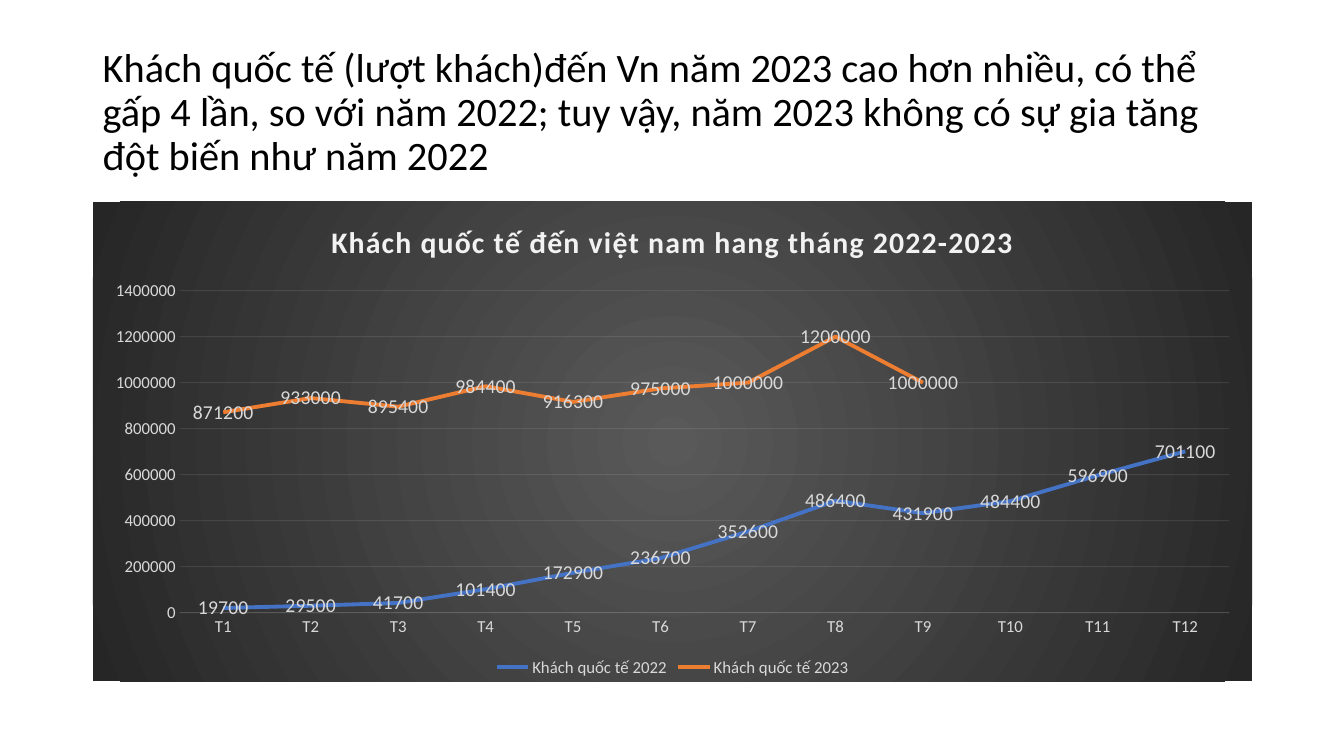
from dataclasses import dataclass

from lxml.etree import SubElement
from pptx import Presentation
from pptx.chart.data import CategoryChartData
from pptx.dml.color import RGBColor
from pptx.enum.chart import XL_CHART_TYPE, XL_LABEL_POSITION, XL_LEGEND_POSITION, XL_TICK_MARK
from pptx.enum.text import MSO_ANCHOR
from pptx.oxml import parse_xml
from pptx.oxml.ns import nsdecls, qn
from pptx.util import Inches, Pt


@dataclass(frozen=True)
class Theme:
    font: str = "Calibri"
    ink: str = "000000"
    pale: str = "F2F2F2"
    muted: str = "D9D9D9"
    glow: str = "595959"
    edge: str = "262626"
    series: tuple = ("4472C4", "ED7D31")
    heading_size: float = 28.8
    chart_title_size: float = 21.3
    label_size: float = 14
    axis_size: float = 12


class VisitorSlide:
    def __init__(self, presentation, theme):
        self.theme = theme
        self.slide = presentation.slides.add_slide(presentation.slide_layouts[6])

    def style_font(self, font, size, color, bold=False):
        font.name = self.theme.font
        font.size = Pt(size)
        font.bold = bold
        font.color.rgb = RGBColor.from_string(color)

    def add_heading(self, text, left, top, width, height):
        box = self.slide.shapes.add_textbox(Inches(left), Inches(top), Inches(width), Inches(height))
        frame = box.text_frame
        frame.word_wrap = True
        frame.vertical_anchor = MSO_ANCHOR.MIDDLE
        paragraph = frame.paragraphs[0]
        paragraph.text = text
        paragraph.line_spacing = 0.9
        self.style_font(paragraph.font, self.theme.heading_size, self.theme.ink)

    def add_line_chart(self, title, months, visitors, left, top, width, height):
        data = CategoryChartData(number_format="General")
        data.categories = months
        for name, counts in visitors.items():
            data.add_series(name, counts)
        chart = self.slide.shapes.add_chart(
            XL_CHART_TYPE.LINE, Inches(left), Inches(top), Inches(width), Inches(height), data
        ).chart
        self.style_font(chart.font, self.theme.axis_size, self.theme.muted)
        self.style_title(chart, title)
        self.style_axes(chart)
        self.style_series(chart.plots[0])
        chart.has_legend = True
        chart.legend.position = XL_LEGEND_POSITION.BOTTOM
        chart.legend.include_in_layout = False
        self.style_font(chart.legend.font, self.theme.axis_size, self.theme.muted)
        self.fill_background(chart)

    def style_title(self, chart, title):
        chart.has_title = True
        paragraph = chart.chart_title.text_frame.paragraphs[0]
        paragraph.text = title
        font = paragraph.runs[0].font
        self.style_font(font, self.theme.chart_title_size, self.theme.pale, bold=True)
        paragraph.runs[0]._r.get_or_add_rPr().set("spc", "100")
        chart.chart_title.include_in_layout = False

    def style_axes(self, chart):
        months, counts = chart.category_axis, chart.value_axis
        for axis in (months, counts):
            axis.major_tick_mark = axis.minor_tick_mark = XL_TICK_MARK.NONE
            self.style_font(axis.tick_labels.font, self.theme.axis_size, self.theme.muted)
        counts.has_major_gridlines = True
        for line in (months.format.line, counts.major_gridlines.format.line):
            line.width = Pt(0.75)
            line.color.rgb = RGBColor.from_string(self.theme.pale)
        counts.format.line.fill.background()
        for color in chart.element.xpath(f'.//a:ln//a:srgbClr[@val="{self.theme.pale}"]'):
            SubElement(color, qn("a:alpha"), val="10000")

    def style_series(self, plot):
        plot.vary_by_categories = False
        for series, color in zip(plot.series, self.theme.series):
            series.smooth = False
            series.format.line.width = Pt(2.75)
            series.format.line.color.rgb = RGBColor.from_string(color)
            labels = series.data_labels
            labels.show_value = True
            labels.position = XL_LABEL_POSITION.CENTER
            self.style_font(labels.font, self.theme.label_size, self.theme.muted)

    def fill_background(self, chart):
        background = parse_xml(
            f'<c:spPr {nsdecls("c", "a")}><a:gradFill><a:gsLst>'
            f'<a:gs pos="0"><a:srgbClr val="{self.theme.glow}"/></a:gs>'
            f'<a:gs pos="100000"><a:srgbClr val="{self.theme.edge}"/></a:gs></a:gsLst>'
            '<a:path path="circle"><a:fillToRect l="50000" t="50000" r="50000" b="50000"/></a:path>'
            "</a:gradFill><a:ln><a:noFill/></a:ln></c:spPr>"
        )
        chart.element.find(qn("c:chart")).addnext(background)


def main():
    presentation = Presentation()
    presentation.slide_width = Inches(13.33)
    presentation.slide_height = Inches(7.5)
    page = VisitorSlide(presentation, Theme())
    page.add_heading(
        "Khách quốc tế (lượt khách)đến Vn năm 2023 cao hơn nhiều, có thể gấp 4 lần, "
        "so với năm 2022; tuy vậy, năm 2023 không có sự gia tăng đột biến như năm 2022",
        0.92, 0.4, 11.5, 1.45,
    )
    visitors = {
        "Khách quốc tế 2022": (
            19700, 29500, 41700, 101400, 172900, 236700,
            352600, 486400, 431900, 484400, 596900, 701100,
        ),
        "Khách quốc tế 2023": (
            871200, 933000, 895400, 984400, 916300, 975000,
            1000000, 1200000, 1000000, None, None, None,
        ),
    }
    page.add_line_chart(
        "Khách quốc tế đến việt nam hang tháng 2022-2023",
        [f"T{month}" for month in range(1, 13)],
        visitors, 0.92, 2, 11.5, 4.76,
    )
    presentation.save("out.pptx")


if __name__ == "__main__":
    main()
